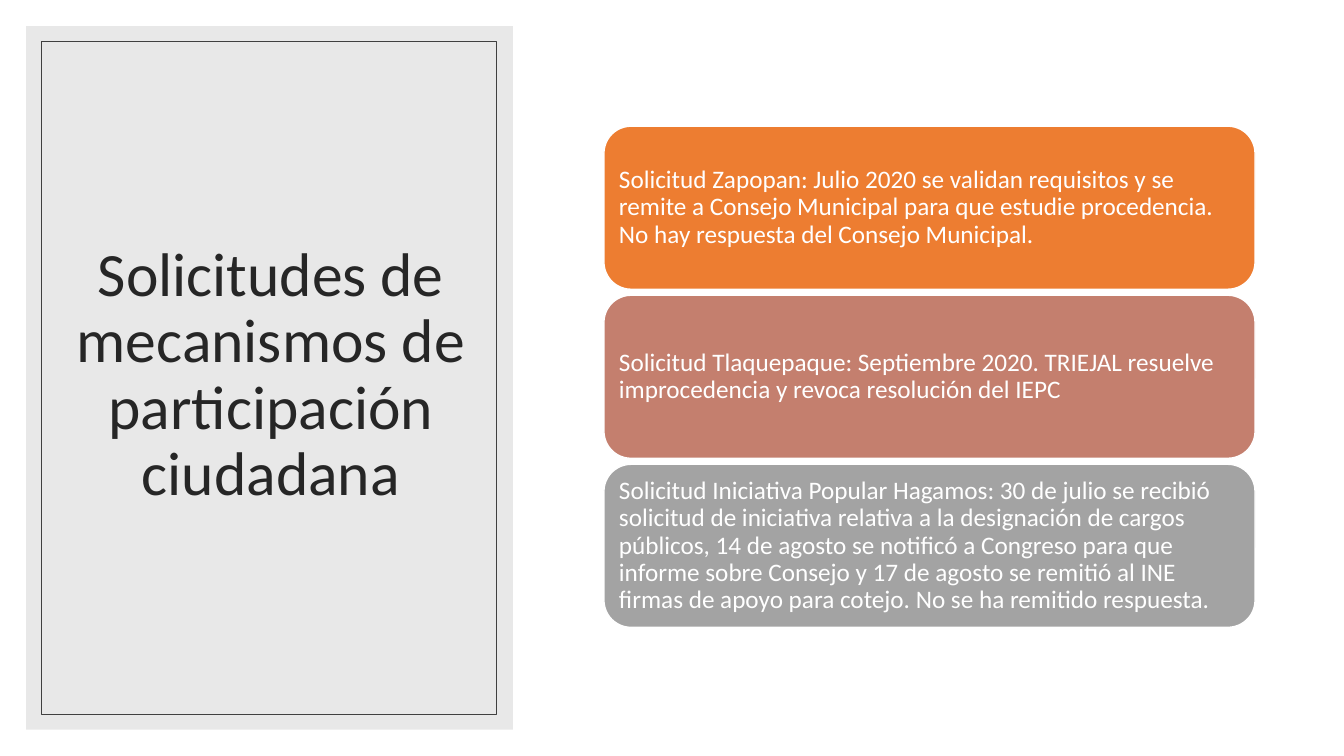
from lxml import etree
from pptx import Presentation
from pptx.dml.color import RGBColor
from pptx.enum.shapes import MSO_SHAPE
from pptx.enum.text import MSO_ANCHOR, MSO_AUTO_SIZE, PP_ALIGN
from pptx.oxml.ns import qn
from pptx.util import Cm, Pt

RECTANGLE = MSO_SHAPE.RECTANGLE
ROUNDED = MSO_SHAPE.ROUNDED_RECTANGLE
MIDDLE = MSO_ANCHOR.MIDDLE
NO_AUTOFIT = MSO_AUTO_SIZE.NONE
LEFT, CENTER = PP_ALIGN.LEFT, PP_ALIGN.CENTER

WHITE = RGBColor(0xFF, 0xFF, 0xFF)
PANEL_GRAY = RGBColor(0xD9, 0xD9, 0xD9)
FRAME_GRAY = RGBColor(0x40, 0x40, 0x40)
TITLE_GRAY = RGBColor(0x26, 0x26, 0x26)
ORANGE = RGBColor(0xED, 0x7D, 0x31)
TERRACOTTA = RGBColor(0xC4, 0x7F, 0x6E)
GRAY = RGBColor(0xA3, 0xA3, 0xA3)

FONT = "Calibri"
TITLE = "Solicitudes de mecanismos de participación ciudadana"
REQUESTS = [
    (ORANGE, "Solicitud Zapopan: Julio 2020 se validan requisitos y se remite a "
             "Consejo Municipal para que estudie procedencia. No hay respuesta del "
             "Consejo Municipal."),
    (TERRACOTTA, "Solicitud Tlaquepaque: Septiembre 2020. TRIEJAL resuelve "
                 "improcedencia y revoca resolución del IEPC"),
    (GRAY, "Solicitud Iniciativa Popular Hagamos: 30 de julio se recibió solicitud "
           "de iniciativa relativa a la designación de cargos públicos, 14 de agosto "
           "se notificó a Congreso para que informe sobre Consejo y 17 de agosto se "
           "remitió al INE firmas de apoyo para cotejo. No se ha remitido respuesta."),
]
CARD_LEFT, CARD_TOP = 15.22, 3.18
CARD_WIDTH, CARD_HEIGHT = 16.41, 4.11
CARD_PITCH = 4.26
CARD_INSET = Cm(0.18)


def add_box(slide, kind, left, top, width, height, fill=None, line=None, line_width=1):
    """Add a shape placed in centimetres; no fill or line unless a colour is given."""
    box = slide.shapes.add_shape(kind, Cm(left), Cm(top), Cm(width), Cm(height))
    box.shadow.inherit = False
    if fill is None:
        box.fill.background()
    else:
        box.fill.solid()
        box.fill.fore_color.rgb = fill
    if line is None:
        box.line.fill.background()
    else:
        box.line.color.rgb = line
        box.line.width = Pt(line_width)
    return box


def set_opacity(box, percent):
    color = box.fill._xPr.find(qn("a:solidFill"))[0]
    etree.SubElement(color, qn("a:alpha")).set("val", str(percent * 1000))


def write_text(shape, text, size, color, alignment):
    frame = shape.text_frame
    frame.text = text
    frame.word_wrap = True
    frame.auto_size = NO_AUTOFIT
    frame.vertical_anchor = MIDDLE
    paragraph = frame.paragraphs[0]
    paragraph.alignment = alignment
    paragraph.line_spacing = 0.9
    font = paragraph.runs[0].font
    font.name = FONT
    font.size = Pt(size)
    font.color.rgb = color


def add_title_panel(slide):
    panel = add_box(slide, RECTANGLE, 0.66, 0.66, 12.27, 17.73, fill=PANEL_GRAY)
    set_opacity(panel, 60)

    title = slide.shapes.title
    title.left, title.top = Cm(1.6), Cm(1.55)
    title.width, title.height = Cm(10.46), Cm(15.85)
    write_text(title, TITLE, 44, TITLE_GRAY, CENTER)
    panel._element.addnext(title._element)

    add_box(slide, RECTANGLE, 1.04, 1.04, 11.46, 16.97, line=FRAME_GRAY, line_width=0.5)


def add_request_card(slide, position, color, text):
    card = add_box(slide, ROUNDED, CARD_LEFT, CARD_TOP + position * CARD_PITCH,
                   CARD_WIDTH, CARD_HEIGHT, fill=color, line=WHITE)
    frame = card.text_frame
    frame.margin_left = frame.margin_right = CARD_INSET
    frame.margin_top = frame.margin_bottom = CARD_INSET
    write_text(card, text, 18, WHITE, LEFT)


def main():
    deck = Presentation()
    deck.slide_width, deck.slide_height = Cm(33.87), Cm(19.05)
    slide = deck.slides.add_slide(deck.slide_layouts.get_by_name("Title Only"))
    add_title_panel(slide)
    for position, (color, text) in enumerate(REQUESTS):
        add_request_card(slide, position, color, text)
    deck.save("out.pptx")


if __name__ == "__main__":
    main()
